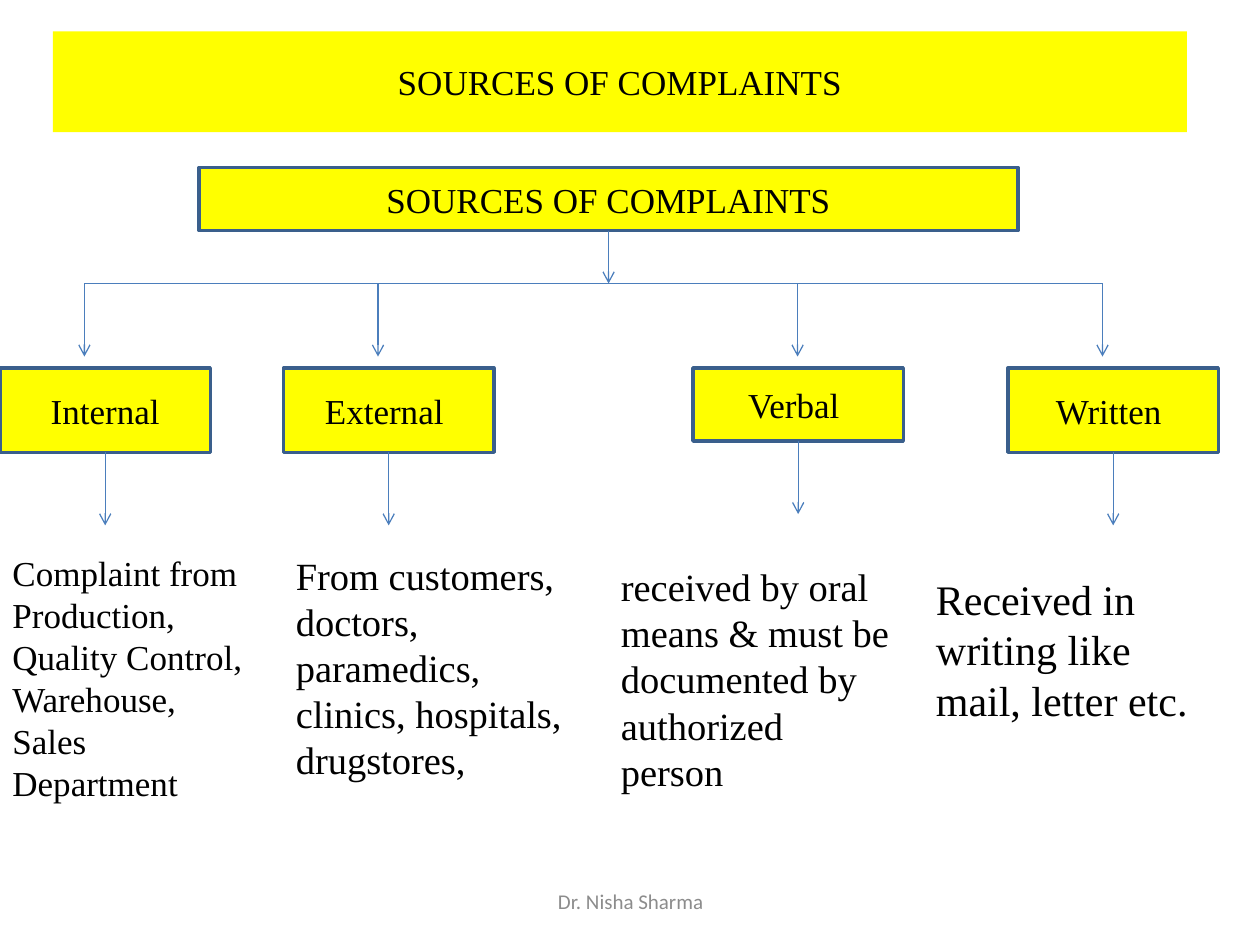
import pptx
import pptx.dml.color
import pptx.enum.shapes
import pptx.enum.text
import pptx.oxml
import pptx.oxml.ns
import pptx.util
from pptx.util import Inches

YELLOW, BLACK, WHITE, GREY = "FFFF00", "000000", "FFFFFF", "8C8C8C"
BORDER, ARROW = "3A5F8C", "4B7EBC"
SERIF, SANS = "Times New Roman", "Calibri"
CENTER = pptx.enum.text.PP_ALIGN.CENTER
LEFT = pptx.enum.text.PP_ALIGN.LEFT
TOP = pptx.enum.text.MSO_ANCHOR.TOP
MIDDLE = pptx.enum.text.MSO_ANCHOR.MIDDLE

# label, box left, box height, arrow x, text left, top, width, height, size, text
BRANCHES = [
    ("Internal", 0, 0.67, 0.67, (0, 4.33, 2.08, 2.12), 20,
     "Complaint from Production, Quality Control, Warehouse, Sales Department"),
    ("External ", 2.25, 0.67, 3, (2.25, 4.33, 2.33, 1.95), 22,
     "From customers, doctors, paramedics, clinics, hospitals, drugstores,"),
    ("Verbal ", 5.5, 0.58, 6.33, (4.83, 4.42, 2.33, 1.95), 22,
     "received by oral means & must be documented by authorized person"),
    ("Written ", 8, 0.67, 8.75, (7.33, 4.5, 2.33, 1.31), 24,
     "Received in writing like mail, letter etc."),
]


def color(value):
    """Return the colour for a hex string."""
    return pptx.dml.color.RGBColor.from_string(value)


def write(shape, text, size, font=SERIF, ink=BLACK, align=CENTER, anchor=MIDDLE):
    """Fill a shape's text frame with one formatted run."""
    frame = shape.text_frame
    frame.word_wrap = True
    frame.vertical_anchor = anchor
    paragraph = frame.paragraphs[0]
    paragraph.alignment = align
    run = paragraph.add_run()
    run.text = text
    run.font.size = pptx.util.Pt(size)
    run.font.name = font
    run.font.color.rgb = color(ink)


def add_box(slide, box, text, border=BORDER):
    """Add a yellow rectangle with centred text."""
    kind = pptx.enum.shapes.MSO_SHAPE.RECTANGLE
    shape = slide.shapes.add_shape(kind, *map(Inches, box))
    shape.shadow.inherit = False
    shape.fill.solid()
    shape.fill.fore_color.rgb = color(YELLOW)
    if border:
        shape.line.color.rgb = color(border)
        shape.line.width = pptx.util.Pt(2)
    else:
        shape.line.fill.background()
    write(shape, text, 20)
    return shape


def add_text(slide, box, text, size, **style):
    """Add a wrapping text box."""
    shape = slide.shapes.add_textbox(*map(Inches, box))
    write(shape, text, size, **style)


def add_line(slide, start, end, arrow=True, source=None):
    """Add a thin line, with an arrowhead and a source shape if wanted."""
    kind = pptx.enum.shapes.MSO_CONNECTOR.STRAIGHT
    connector = slide.shapes.add_connector(kind, *map(Inches, (*start, *end)))
    if source is not None:
        connector.begin_connect(source, 2)
    connector.line.color.rgb = color(ARROW)
    connector.line.width = pptx.util.Pt(0.75)
    if arrow:
        tail = pptx.oxml.parse_xml(
            f'<a:tailEnd {pptx.oxml.ns.nsdecls("a")} type="arrow"/>')
        connector.line._get_or_add_ln().append(tail)
    effects = pptx.oxml.parse_xml(f'<a:effectLst {pptx.oxml.ns.nsdecls("a")}/>')
    connector._element.spPr.append(effects)


def add_root(slide, box, rail):
    """Add the root box, its arrow and the rail above the branches."""
    left, top, width, height = box
    root = add_box(slide, box, "SOURCES OF COMPLAINTS")
    middle = left + width / 2
    add_line(slide, (middle, top + height), (middle, rail), source=root)
    add_line(slide, (BRANCHES[0][3], rail), (BRANCHES[-1][3], rail), arrow=False)


def add_branch(slide, box, label, arrow_x, rail, text_box, size, text):
    """Add one branch: arrow from the rail, box, arrow down and description."""
    left, top, width, height = box
    drop = 0.58
    add_line(slide, (arrow_x, rail), (arrow_x, rail + drop))
    shape = add_box(slide, box, label)
    middle, bottom = left + width / 2, top + height
    add_line(slide, (middle, bottom), (middle, bottom + drop), source=shape)
    add_text(slide, text_box, text, size, align=LEFT, anchor=TOP)


def main():
    """Build the slide and save it."""
    presentation = pptx.Presentation()
    presentation.slide_width = Inches(10)
    presentation.slide_height = Inches(7.5)
    slide = presentation.slides.add_slide(presentation.slide_layouts[6])
    slide.background.fill.solid()
    slide.background.fill.fore_color.rgb = color(WHITE)
    rail = 2.25
    add_box(slide, (0.42, 0.25, 9, 0.8), "SOURCES OF COMPLAINTS", border=None)
    add_root(slide, (1.58, 1.33, 6.5, 0.5), rail)
    for label, left, height, arrow_x, text_box, size, text in BRANCHES:
        add_branch(slide, (left, 2.92, 1.67, height), label, arrow_x, rail,
                   text_box, size, text)
    add_text(slide, (3.42, 6.95, 3.17, 0.4), "Dr. Nisha Sharma", 12,
             font=SANS, ink=GREY)
    presentation.save("out.pptx")


if __name__ == "__main__":
    main()
